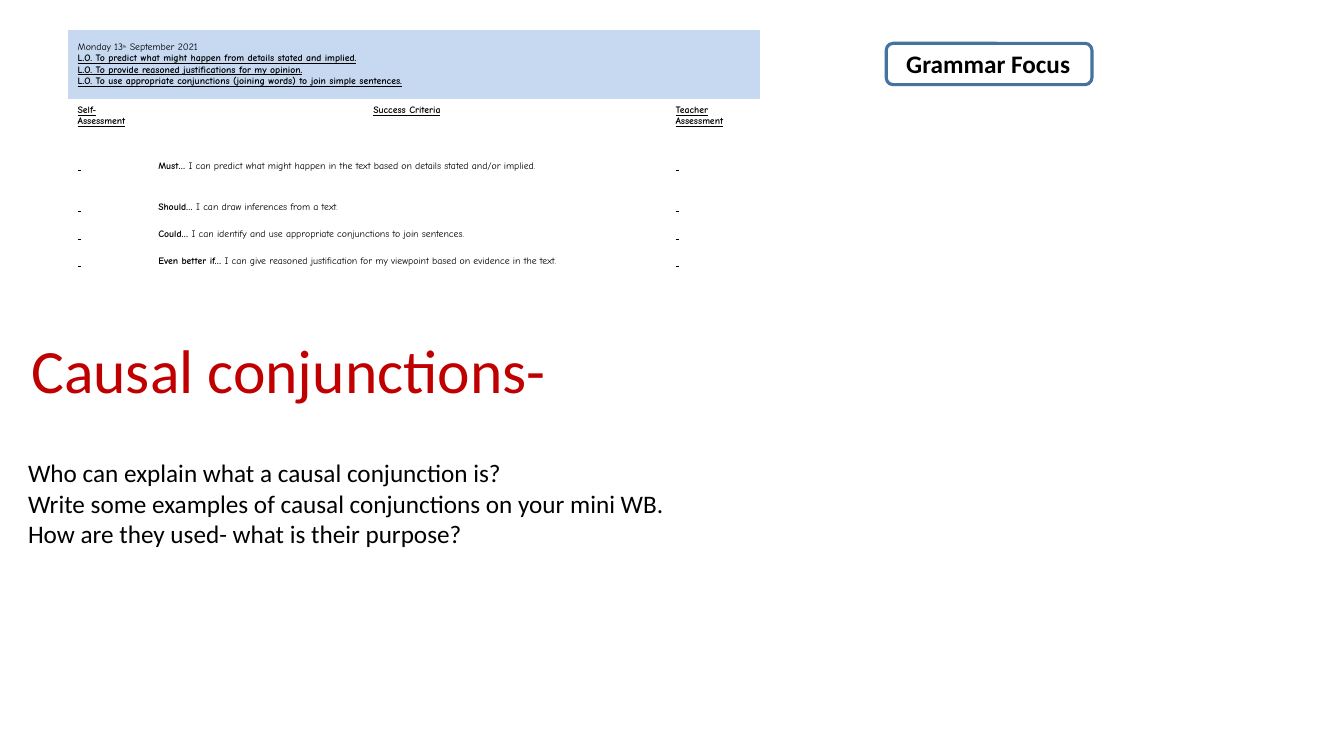
"""Build the causal conjunctions slide with its learning objectives table."""
from pptx import Presentation
from pptx.dml.color import RGBColor
from pptx.enum.shapes import MSO_SHAPE
from pptx.enum.text import MSO_ANCHOR, MSO_AUTO_SIZE, PP_ALIGN
from pptx.oxml import parse_xml
from pptx.oxml.ns import nsdecls
from pptx.util import Inches, Pt

TITLE = "Causal conjunctions-"
QUESTIONS = [
    "Who can explain what a causal conjunction is?",
    "Write some examples of causal conjunctions on your mini WB.",
    "How are they used- what is their purpose?",
]
BADGE = "Grammar Focus"
DATE = [("Monday 13", ""), ("th", "sup"), (" September 2021 ", "")]
OBJECTIVES = [
    "L.O. To predict what might happen from details stated and implied.",
    "L.O. To provide reasoned justifications for my opinion.",
    "L.O. To use appropriate conjunctions (joining words) to join simple sentences.",
]
HEADINGS = ["Self- Assessment", "Success Criteria", "Teacher Assessment"]
CRITERIA = [
    ("Must… ", "I can predict what might happen in the text based on details stated and/or implied. "),
    ("Should… ", "I can draw inferences from a text. "),
    ("Could… ", "I can identify and use appropriate conjunctions to join sentences. "),
    ("Even better if… ", "I can give reasoned justification for my viewpoint based on evidence in the text. "),
]
BLANK = [(" ", "underline")]
COLS = [0.8, 5.13, 0.94]
ROWS = [0.7, 0.55, 0.41, 0.27, 0.27, 0.41]


def rgb(color):
    return RGBColor.from_string(color)


def set_font(font, name, size, color="000000"):
    font.name, font.size = name, Pt(size)
    font.color.rgb = rgb(color)


def add_borders(cell):
    for side in ("lnL", "lnR", "lnT", "lnB"):
        line = parse_xml(
            f'<a:{side} {nsdecls("a")} w="7620"><a:solidFill>'
            f'<a:srgbClr val="FFFFFF"/></a:solidFill></a:{side}>')
        cell._tc.get_or_add_tcPr().append(line)


def fill_cell(cell, paragraphs, align=PP_ALIGN.LEFT):
    tf = cell.text_frame
    for i, runs in enumerate(paragraphs):
        p = tf.add_paragraph() if i else tf.paragraphs[0]
        p.alignment = align
        set_font(p.font, "Comic Neue", 7)
        for text, style in runs:
            r = p.add_run()
            r.text = text
            set_font(r.font, "Comic Neue", 5.5 if style == "sup" else 7)
            r.font.bold = style in ("bold", "heading")
            r.font.underline = style in ("underline", "heading")
            if style == "sup":
                r.font._element.set("baseline", "30000")


def add_objectives_table(s):
    table = s.shapes.add_table(len(ROWS), len(COLS), Inches(0.67), Inches(0.29),
                               Inches(sum(COLS)), Inches(sum(ROWS))).table
    table.first_row = table.horz_banding = False
    for col, width in zip(table.columns, COLS):
        col.width = Inches(width)
    for row, height in zip(table.rows, ROWS):
        row.height = Inches(height)
    for cell in table.iter_cells():
        add_borders(cell)
        cell.fill.background()

    banner = table.cell(0, 0)
    banner.merge(table.cell(0, 2))
    banner.fill.solid()
    banner.fill.fore_color.rgb = rgb("C6D9F1")
    banner.vertical_anchor = MSO_ANCHOR.MIDDLE
    fill_cell(banner, [DATE] + [[(text, "heading")] for text in OBJECTIVES])

    for c, text in enumerate(HEADINGS):
        fill_cell(table.cell(1, c), [[(text, "heading")]],
                  PP_ALIGN.CENTER if c == 1 else PP_ALIGN.LEFT)
    for r, (level, text) in enumerate(CRITERIA, start=2):
        fill_cell(table.cell(r, 0), [BLANK])
        fill_cell(table.cell(r, 1), [[(level, "bold"), (text, "")]])
        fill_cell(table.cell(r, 2), [BLANK])


def add_text(s, lines, left, top, width, height, bold=False):
    tf = s.shapes.add_textbox(Inches(left), Inches(top), Inches(width), Inches(height)).text_frame
    tf.word_wrap = False
    tf.auto_size = MSO_AUTO_SIZE.SHAPE_TO_FIT_TEXT
    for i, line in enumerate(lines):
        p = tf.add_paragraph() if i else tf.paragraphs[0]
        p.text = line
        set_font(p.font, "Calibri", 18)
        p.font.bold = bold


def main():
    prs = Presentation()
    prs.slide_width, prs.slide_height = Inches(13.33), Inches(7.5)
    s = prs.slides.add_slide(prs.slide_layouts[5])

    title = s.shapes.title
    title.left, title.top = Inches(0.21), Inches(2.98)
    title.width, title.height = Inches(6.96), Inches(1.45)
    tf = title.text_frame
    tf.text = TITLE
    tf.vertical_anchor = MSO_ANCHOR.MIDDLE
    p = tf.paragraphs[0]
    p.alignment, p.line_spacing = PP_ALIGN.LEFT, 0.9
    set_font(p.font, "Calibri", 44, "C00000")

    add_objectives_table(s)
    add_text(s, QUESTIONS, 0.18, 4.49, 6.58, 1.01)
    add_text(s, [BADGE], 8.89, 0.43, 1.84, 0.4, bold=True)

    frame = s.shapes.add_shape(MSO_SHAPE.ROUNDED_RECTANGLE, Inches(8.79), Inches(0.43),
                               Inches(2.04), Inches(0.41))
    frame.shadow.inherit = False
    frame.fill.background()
    frame.line.color.rgb = rgb("43739E")
    frame.line.width = Pt(2.25)

    prs.save("out.pptx")


if __name__ == "__main__":
    main()
